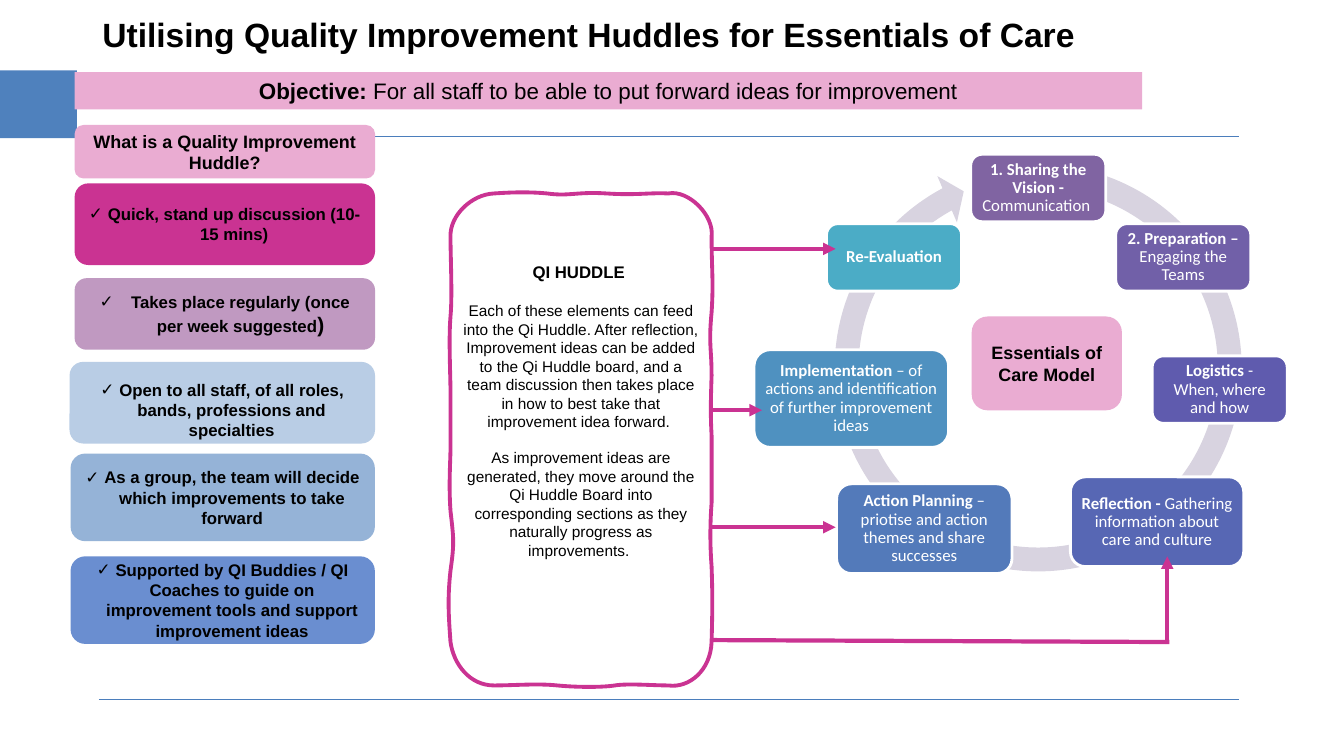
from lxml.etree import SubElement
from pptx import Presentation
from pptx.dml.color import RGBColor
from pptx.enum.shapes import MSO_CONNECTOR, MSO_SHAPE
from pptx.enum.text import MSO_ANCHOR, PP_ALIGN
from pptx.oxml.ns import qn
from pptx.util import Pt

MAGENTA, PINK, BLACK, WHITE = "CA3392", "EAACD2", "000000", "FFFFFF"
CARDS = [
    (3.6, 41.7, 214.6, 58.3, MAGENTA, 13.5, 0,
     [("Quick, stand up discussion (10-15 mins)", True, 12)]),
    (3.6, 109.4, 214.6, 51.1, "C099C1", 22.5, 0,
     [("Takes place regularly (once per week suggested", True, 12), (")", True, 15)]),
    (0, 169.2, 218.2, 58.3, "B9CDE5", 13.5, 10,
     [("Open to all staff, of all roles, bands, professions and specialties", True, 12)]),
    (0.7, 234.7, 217.4, 62.6, "95B3D7", 13.5, 0,
     [("As a group, the team will decide which improvements to take forward", True, 12)]),
    (0.7, 308.1, 217.4, 62.6, "6A8ED0", 13.5, 0,
     [("Supported by QI Buddies / QI Coaches to guide on improvement tools "
       "and support improvement ideas", True, 12)]),
]
STEPS = [
    (106.6, 2.2, 96.5, 48.2, 4, "8064A2", "1. Sharing the Vision - ", "Communication "),
    (210.2, 51.8, 96.5, 48.2, 4, "7160A8", "2. Preparation – ", "Engaging the Teams"),
    (236.2, 146.2, 96.5, 48.2, 8, "5F5BAE", "Logistics", " - When, where and how"),
    (177.8, 232.6, 123.8, 64.1, 4, "5767B4", "Reflection - ",
     "Gathering information about care and culture"),
    (10.8, 237.6, 125.3, 64.1, 4, "537ABA", "Action Planning",
     " – priotise and action themes and share successes"),
    (-48.2, 141.8, 139, 69.8, 4, "4F91C0", "Implementation ",
     "– of actions and identification of further improvement ideas"),
    (3.6, 51.8, 96.5, 48.2, 4, "4BACC6", "Re-Evaluation", ""),
]
CURVES = [
    (-0.7, 15.8, 15.1, 0.7, 31, 0), (41, -0.7, 54.7, -1.4, 69.1, 0),
    (85, 2.2, 90, -1.4, 111.6, 0), (132.5, 1.4, 141.8, -0.7, 155.5, 0),
    (170, -2.9, 188.6, 15.8, 186.5, 31), (186.5, 54, 188, 62.6, 186.5, 85),
    (184.3, 108, 186.5, 110.2, 186.5, 130.3), (185.8, 151.2, 185.8, 159.1, 186.5, 172.8),
    (186.5, 186.5, 186.5, 211, 186.5, 221), (185.8, 231.1, 185, 246.2, 186.5, 266.4),
    (187.2, 286.6, 187.2, 295.2, 186.5, 320.4), (185.8, 340.6, 170.6, 353.5, 155.5, 351.4),
    (144.7, 351.4, 126.7, 349.9, 117.4, 351.4), (108.7, 352.8, 90.7, 352.8, 76.3, 351.4),
    (61.9, 349.9, 45.4, 351.4, 31, 351.4), (13.7, 351.4, 2.2, 336.2, 0, 320.4),
    (-1.4, 301, -2.2, 289.4, 0, 269.3), (2.9, 249.1, 2.2, 246.2, 0, 226.8),
    (-1.4, 207.4, 0, 190.8, 0, 181.4), (0, 172.1, 0, 153.4, 0, 141.8),
    (0, 130.3, -1.4, 103.7, 0, 87.8), (1.4, 72.7, 0, 46.1, 0, 31),
]


def paint(target, tone):
    """Give a fill a solid hex colour."""
    target.solid()
    target.fore_color.rgb = RGBColor.from_string(tone)


def write(para, parts, face="Arial", tone=BLACK):
    """Write centred text from (text, bold, size) parts."""
    para.text = parts[0][0]
    for text, _, _ in parts[1:]:
        para.add_run().text = text
    para.alignment = PP_ALIGN.CENTER
    for run, (_, bold, size) in zip(para.runs, parts):
        run.font.name, run.font.size, run.font.bold = face, Pt(size), bold
        paint(run.font.fill, tone)


def block(slide, kind, x, y, w, h, tone, edge=None):
    """Add a filled shape, with an outline only if an edge colour is given."""
    shape = slide.shapes.add_shape(kind, Pt(x), Pt(y), Pt(w), Pt(h))
    shape.shadow.inherit = False
    paint(shape.fill, tone)
    if edge:
        paint(shape.line.fill, edge)
        shape.line.width = Pt(2)
    else:
        shape.line.fill.background()
    shape.text_frame.word_wrap = True
    shape.text_frame.vertical_anchor = MSO_ANCHOR.MIDDLE
    return shape


def rule(slide, x1, y1, x2, y2, tone, width, head=False):
    """Draw a straight line, with an arrowhead at its end if asked."""
    line = slide.shapes.add_connector(
        MSO_CONNECTOR.STRAIGHT, Pt(x1), Pt(y1), Pt(x2), Pt(y2))
    paint(line.line.fill, tone)
    line.line.width = Pt(width)
    if head:
        SubElement(line.line._get_or_add_ln(), qn("a:tailEnd"), type="triangle")
    SubElement(line._element.spPr, qn("a:effectLst"))


def tick(para, gap):
    """Give a paragraph a hanging tick bullet."""
    props = para._p.get_or_add_pPr()
    props.set("marL", str(Pt(gap)))
    props.set("indent", str(-Pt(gap)))
    SubElement(props, qn("a:buFont"), typeface="Arial")
    SubElement(props, qn("a:buChar"), char="✓")


def banner(slide, x, y, w, h):
    """Place the frame lines, title and objective bar in the page box."""
    for top in (97.6, h - 40.5):
        rule(slide, x + 70.6, y + top, x + w - 75.1, y + top, "4B7EBC", 0.75)
    block(slide, MSO_SHAPE.RECTANGLE, x, y + 50.2, 55, 48.5, "4F81BD")
    title = slide.shapes.title
    title.left, title.top, title.width, title.height = Pt(x + 49.7), Pt(y + 6.5), Pt(741.6), Pt(42.5)
    title.text_frame.vertical_anchor = MSO_ANCHOR.TOP
    write(title.text_frame.paragraphs[0],
          [("Utilising Quality Improvement Huddles for Essentials of Care", True, 24)])
    bar = block(slide, MSO_SHAPE.RECTANGLE, x + 53.3, y + 51.5, 762.5, 26.6, PINK)
    bar.text_frame.vertical_anchor = MSO_ANCHOR.TOP
    write(bar.text_frame.paragraphs[0], [
        ("Objective:", True, 16),
        (" For all staff to be able to put forward ideas for improvement", False, 16)])


def column(slide, x, y):
    """Stack the heading and the ticked cards from a top left corner."""
    head = block(slide, MSO_SHAPE.ROUNDED_RECTANGLE, x + 3.6, y, 214.6, 38.2, PINK)
    write(head.text_frame.paragraphs[0], [("What is a Quality Improvement Huddle?", True, 12.8)])
    for left, top, w, h, tone, gap, drop, parts in CARDS:
        card = block(slide, MSO_SHAPE.ROUNDED_RECTANGLE, x + left, y + top, w, h, tone)
        card.text_frame.margin_top = Pt(3.6 + drop)
        para = card.text_frame.paragraphs[0]
        tick(para, gap)
        write(para, parts)


def bend(shape, x, y):
    """Turn the straight sides of the panel at x, y into its curves."""
    sides = list(shape._element.iter(qn("a:lnTo")))
    for side, nums in zip(sides, CURVES):
        arc = side.makeelement(qn("a:cubicBezTo"), {})
        for px, py in zip(nums[::2], nums[1::2]):
            SubElement(arc, qn("a:pt"), x=str(Pt(x + px) - shape.left),
                       y=str(Pt(y + py) - shape.top))
        side.getparent().replace(side, arc)


def panel(slide, x, y):
    """Draw the wavy huddle panel and its text from a top left corner."""
    ends = [(Pt(x + nums[4]), Pt(y + nums[5])) for nums in CURVES]
    form = slide.shapes.build_freeform(*ends[-1])
    form.add_line_segments(ends, close=True)
    shape = form.convert_to_shape()
    bend(shape, x, y)
    shape.shadow.inherit = False
    shape.fill.background()
    paint(shape.line.fill, MAGENTA)
    shape.line.width = Pt(2.75)
    frame = shape.text_frame
    frame.word_wrap = True
    frame.vertical_anchor = MSO_ANCHOR.MIDDLE
    frame.margin_left = frame.margin_right = Pt(8.4)
    frame.margin_bottom = Pt(45)
    texts = [
        ("QI HUDDLE ", True, 12, 0),
        ("Each of these elements can feed into the Qi Huddle. After reflection, Improvement "
         "ideas can be added to the Qi Huddle board, and a team discussion then takes place "
         "in how to best take that improvement idea forward. ", False, 11, 14.2),
        ("As improvement ideas are generated, they move around the Qi Huddle Board into "
         "corresponding sections as they naturally progress as improvements. ", False, 11, 12.7),
    ]
    for i, (text, bold, size, gap) in enumerate(texts):
        para = frame.add_paragraph() if i else frame.paragraphs[0]
        write(para, [(text, bold, size)])
        para.space_before = Pt(gap)


def cycle(slide, x, y, size):
    """Draw the arrow ring, its steps and the hub in a square box."""
    ring = block(slide, MSO_SHAPE.CIRCULAR_ARROW, x, y, size, size, "D8D3E0")
    for i, value in enumerate((0.055, 3.307, 144.979, 169.605, 0.058)):
        ring.adjustments[i] = value
    for left, top, w, h, pad, tone, name, rest in STEPS:
        step = block(slide, MSO_SHAPE.ROUNDED_RECTANGLE, x + left, y + top, w, h, tone, WHITE)
        frame = step.text_frame
        frame.margin_left = frame.margin_right = Pt(pad)
        frame.margin_top = frame.margin_bottom = Pt(4)
        para = frame.paragraphs[0]
        parts = [(name, True, 12)] + ([(rest, False, 12)] if rest else [])
        write(para, parts, "Calibri", WHITE)
        para.line_spacing = 0.9
    hub = block(slide, MSO_SHAPE.ROUNDED_RECTANGLE, x + 107.3, y + 118.1, 107.3, 67, PINK)
    write(hub.text_frame.paragraphs[0], [("Essentials of Care Model", True, 12.8)])


def links(slide, x, y):
    """Draw arrows from the panel edge, at x and its top y, to the ring."""
    for reach, drop in ((88.6, 238.4), (36, 154.8), (88.6, 39.6)):
        rule(slide, x, y + drop, x + reach, y + drop, MAGENTA, 3, True)
    rule(slide, x, y + 319, x + 326.9, y + 320.4, MAGENTA, 3)
    rule(slide, x + 325.5, y + 321.9, x + 325.5, y + 259.2, MAGENTA, 3, True)


def main():
    """Build and save the slide."""
    deck = Presentation()
    deck.slide_width, deck.slide_height = Pt(960), Pt(540)
    slide = deck.slides.add_slide(deck.slide_layouts[5])
    banner(slide, 0, 0, 960, 540)
    column(slide, 49.7, 89.3)
    panel(slide, 321.8, 138.2)
    cycle(slide, 586.8, 108, 309.6)
    links(slide, 508.3, 138.2)
    deck.save("out.pptx")


if __name__ == "__main__":
    main()
